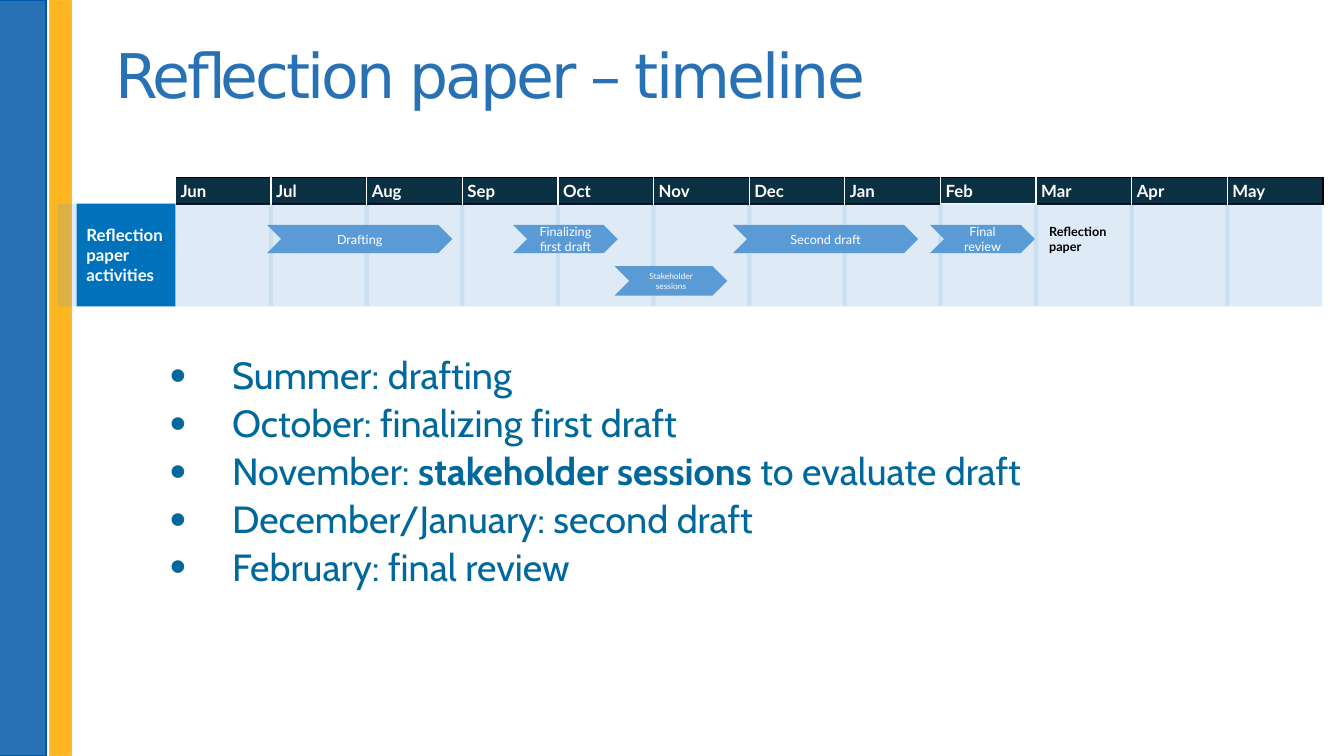
import lxml.etree
import pptx
import pptx.dml.color
import pptx.enum.shapes
import pptx.enum.text
import pptx.oxml
import pptx.oxml.ns
import pptx.util

Cm = pptx.util.Cm
Pt = pptx.util.Pt
RGB = pptx.dml.color.RGBColor
Kind = pptx.enum.shapes.MSO_SHAPE
Align = pptx.enum.text.PP_ALIGN
Anchor = pptx.enum.text.MSO_ANCHOR
Fit = pptx.enum.text.MSO_AUTO_SIZE
qn = pptx.oxml.ns.qn

WHITE = RGB(0xFF, 0xFF, 0xFF)
BLACK = RGB(0, 0, 0)
BLUE = RGB(0x27, 0x71, 0xB4)
EDGE = RGB(0x00, 0x57, 0xA8)
GOLD = RGB(0xFE, 0xB6, 0x20)
AMBER = RGB(0xFE, 0xBB, 0x30)
TEAL = RGB(0x01, 0x68, 0x9B)
NAVY = RGB(0x0B, 0x30, 0x41)
SKY = RGB(0x5B, 0x9B, 0xD5)
LABEL = RGB(0x00, 0x72, 0xBC)

TITLE = {"name": "DejaVu Sans", "size": Pt(44), "color": BLUE}
BODY = {"name": "Cabin", "size": Pt(27), "color": TEAL}
HEAD = {"name": "Lato", "size": Pt(12), "color": WHITE, "bold": True}
STEP = {"name": "Lato", "size": Pt(9), "color": WHITE}
SMALL = {**STEP, "size": Pt(6)}
GOAL = {**STEP, "color": BLACK, "bold": True}

MONTHS = "Jun Jul Aug Sep Oct Nov Dec Jan Feb Mar Apr May".split()
LEFT, COL = 4.42, 2.41
STEPS = [
    ("Drafting", 6.73, 4.67),
    ("Finalizing first draft", 12.93, 2.64),
    ("Second draft", 18.47, 4.67),
    ("Final review", 23.44, 2.64),
]
POINTS = [
    [("Summer: drafting", False)],
    [("October: finalizing first draft", False)],
    [("November: ", False), ("stakeholder sessions ", True), ("to evaluate draft", False)],
    [("December/January: second draft", False)],
    [("February: final review", False)],
]


class Deck:
    def __init__(self):
        self.prs = pptx.Presentation()
        self.prs.slide_width = Cm(33.87)
        self.prs.slide_height = Cm(19.05)
        self.slide = self.prs.slides.add_slide(self.prs.slide_layouts[1])
        self.shapes = self.slide.shapes

    def style(self, font, look):
        for key, val in look.items():
            if key == "color":
                font.color.rgb = val
            else:
                setattr(font, key, val)

    def text(self, para, words, look):
        run = para.add_run()
        run.text = words
        self.style(run.font, look)
        return run

    def fade(self, fill, share):
        tone = fill._xPr.find(".//" + qn("a:srgbClr"))
        lxml.etree.SubElement(tone, qn("a:alpha"), val=str(share * 1000))

    def place(self, item, box, inset):
        item.left, item.top, item.width, item.height = map(Cm, box)
        frame = item.text_frame
        for side in ("left", "top", "right", "bottom"):
            setattr(frame, "margin_" + side, Cm(inset))
        frame.auto_size = Fit.NONE
        frame.vertical_anchor = Anchor.TOP
        return frame

    def title(self, words, box):
        para = self.place(self.shapes.title, box, 0.08).paragraphs[0]
        para.alignment = Align.LEFT
        para.line_spacing = 0.7
        run = self.text(para, words, TITLE)
        run.font._element.set("spc", "-210")

    def list(self, points, box):
        frame = self.place(self.slide.placeholders[1], box, 0.08)
        for num, parts in enumerate(points):
            para = frame.add_paragraph() if num else frame.paragraphs[0]
            para.level = 1
            props = para._p.get_or_add_pPr()
            props.set("marL", str(Cm(3.28)))
            props.set("indent", str(Cm(-1.57)))
            lxml.etree.SubElement(props, qn("a:buSzPct"), val="123000")
            lxml.etree.SubElement(props, qn("a:buChar"), char="•")
            para.line_spacing = 0.9
            para.space_before = Pt(5 if num else 0)
            for words, bold in parts:
                self.text(para, words, {**BODY, "bold": bold})

    def shape(self, kind, box, fill, edge=None, share=None):
        item = self.shapes.add_shape(kind, *map(Cm, box))
        item.shadow.inherit = False
        item.fill.solid()
        item.fill.fore_color.rgb = fill
        if share:
            self.fade(item.fill, share)
        if edge:
            item.line.color.rgb = edge
            item.line.width = Pt(1.5)
        else:
            item.line.fill.background()
        return item

    def label(self, item, words, look, align):
        frame = item.text_frame
        frame.word_wrap = True
        frame.vertical_anchor = Anchor.MIDDLE
        frame.paragraphs[0].alignment = align
        self.text(frame.paragraphs[0], words, look)

    def step(self, words, box, look=STEP):
        self.label(self.shape(Kind.CHEVRON, box, SKY), words, look, Align.CENTER)

    def note(self, words, box, look):
        frame = self.shapes.add_textbox(*map(Cm, box)).text_frame
        frame.word_wrap = True
        frame.auto_size = Fit.SHAPE_TO_FIT_TEXT
        self.text(frame.paragraphs[0], words, look)

    def rule(self, x, top, end):
        line = self.shapes.add_connector(
            pptx.enum.shapes.MSO_CONNECTOR.STRAIGHT, Cm(x), Cm(top), Cm(x), Cm(end))
        line.line.color.rgb = SKY
        line.line.width = Pt(3)
        tone = line._element.spPr.find(".//" + qn("a:srgbClr"))
        lxml.etree.SubElement(tone, qn("a:alpha"), val="15000")
        lxml.etree.SubElement(line._element.spPr, qn("a:effectLst"))

    def border(self, cell, tones):
        props = cell._tc.get_or_add_tcPr()
        for spot, (side, tone) in enumerate(tones.items()):
            line = lxml.etree.Element(qn("a:ln" + side), w=str(Pt(1)))
            fill = lxml.etree.SubElement(line, qn("a:solidFill"))
            lxml.etree.SubElement(fill, qn("a:srgbClr"), val=str(tone))
            props.insert(spot, line)

    def table(self, names, box):
        grid = self.shapes.add_table(1, len(names), *map(Cm, box)).table
        grid.rows[0].height = Cm(box[3])
        for num, name in enumerate(names):
            grid.columns[num].width = Cm(COL)
            cell = grid.cell(0, num)
            cell.margin_left = cell.margin_right = Cm(0.13)
            cell.margin_top = cell.margin_bottom = Cm(0.08)
            cell.fill.solid()
            cell.fill.fore_color.rgb = NAVY
            self.border(cell, {
                "L": WHITE,
                "R": BLACK if name == "May" else WHITE,
                "T": BLACK,
                "B": WHITE if name == "Feb" else BLACK,
            })
            self.text(cell.text_frame.paragraphs[0], name, HEAD)


def main():
    deck = Deck()
    deck.shape(Kind.RECTANGLE, (-0.02, 0, 1.17, 19.05), BLUE, EDGE)
    deck.shape(Kind.RECTANGLE, (1.25, 0, 0.53, 19.05), GOLD, AMBER)
    deck.title("Reflection paper – timeline", (2.82, 1.35, 29.9, 1.98))
    deck.list(POINTS, (2.49, 8.92, 27.25, 9.27))
    deck.table(MONTHS, (LEFT, 4.47, COL * len(MONTHS), 0.64))
    deck.shape(Kind.RECTANGLE, (1.45, 5.13, 31.88, 2.59), SKY, share=20)
    tag = deck.shape(Kind.RECTANGLE, (1.93, 5.13, 2.49, 2.59), LABEL)
    deck.label(tag, "Reflection paper activities", HEAD, Align.LEFT)
    deck.note("Reflection paper", (26.19, 5.51, 2.26, 1.02), GOAL)
    deck.step("Stakeholder sessions", (15.49, 6.71, 2.84, 0.74), SMALL)
    for num in range(1, len(MONTHS)):
        deck.rule(LEFT + COL * num, 5.17, 7.71)
    for words, x, width in STEPS:
        deck.step(words, (x, 5.67, width, 0.71))
    deck.prs.save("out.pptx")


if __name__ == "__main__":
    main()
